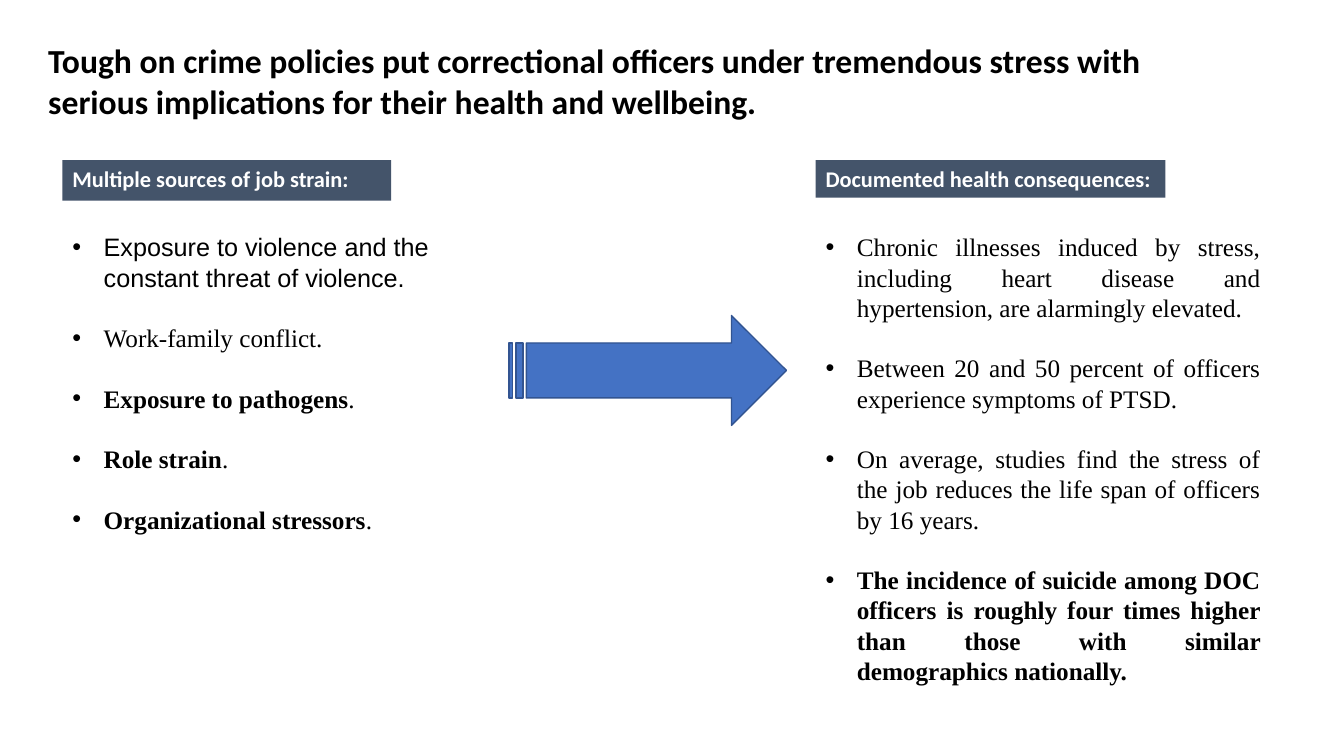
from lxml import etree
from pptx import Presentation
from pptx import util as u
from pptx.dml.color import RGBColor
from pptx.enum import shapes, text
from pptx.oxml.ns import qn

LINE_HEIGHT = u.Pt(21.6)
INDENT = u.Inches(0.31)
LEFT_COLUMN, RIGHT_COLUMN = 0.62, 8.09
HEADER_TOP, LIST_TOP = 1.59, 2.25


def color(value):
    return RGBColor.from_string(value)


def write(paragraph, content, size=18, font="Times New Roman", fill="000000", bold=False):
    run = paragraph.add_run()
    run.text = content
    run.font.size = u.Pt(size)
    run.font.name = font
    run.font.bold = bold
    run.font.color.rgb = color(fill)


presentation = Presentation()
presentation.slide_width = u.Inches(13.33)
presentation.slide_height = u.Inches(7.5)
slide = presentation.slides.add_slide(presentation.slide_layouts[6])

# Title
title = slide.shapes.add_textbox(u.Inches(0.38), u.Inches(0.31), u.Inches(11.75), u.Inches(0.98))
title.text_frame.word_wrap = True
title.text_frame.vertical_anchor = text.MSO_ANCHOR.MIDDLE
write(title.text_frame.paragraphs[0],
      "Tough on crime policies put correctional officers under tremendous stress with "
      "serious implications for their health and wellbeing.",
      size=24, font="Calibri", bold=True)

# Column headers
headers = [
    ("Multiple sources of job strain:", LEFT_COLUMN, 3.26, 0.4),
    ("Documented health consequences:", RIGHT_COLUMN, 3.47, 0.37),
]
for label, left, width, height in headers:
    header = slide.shapes.add_shape(shapes.MSO_SHAPE.RECTANGLE, u.Inches(left),
                                    u.Inches(HEADER_TOP), u.Inches(width), u.Inches(height))
    header.shadow.inherit = False
    header.fill.solid()
    header.fill.fore_color.rgb = color("44546A")
    header.line.fill.background()
    header.text_frame.word_wrap = True
    header.text_frame.vertical_anchor = text.MSO_ANCHOR.TOP
    paragraph = header.text_frame.paragraphs[0]
    paragraph.alignment = text.PP_ALIGN.LEFT
    write(paragraph, label, size=16, font="Calibri", fill="FFFFFF", bold=True)

# Bullet lists: each item is a list of (text, format) runs
strains = [
    [("Exposure to violence and the constant threat of violence.", {"font": "Arial"})],
    [("Work-family conflict.", {})],
    [("Exposure to pathogens", {"bold": True}), (".", {})],
    [("Role strain", {"bold": True}), (".", {})],
    [("Organizational stressors", {"bold": True}), (".", {})],
]
consequences = [
    [("Chronic illnesses induced by stress, including heart disease and hypertension, "
      "are alarmingly elevated.", {})],
    [("Between 20 and 50 percent of officers experience symptoms of PTSD.", {})],
    [("On average, studies find the stress of the job reduces the life span of officers "
      "by 16 years.", {})],
    [("The incidence of suicide among DOC officers is roughly four times higher than those "
      "with similar demographics nationally.", {"bold": True})],
]
columns = [
    (strains, LEFT_COLUMN, 4.25, 3.74, text.PP_ALIGN.LEFT),
    (consequences, RIGHT_COLUMN, 4.51, 5.25, text.PP_ALIGN.JUSTIFY),
]
for items, left, width, height, alignment in columns:
    box = slide.shapes.add_textbox(u.Inches(left), u.Inches(LIST_TOP),
                                   u.Inches(width), u.Inches(height))
    frame = box.text_frame
    frame.word_wrap = True
    for index, runs in enumerate(items):
        paragraph = frame.add_paragraph() if index else frame.paragraphs[0]
        paragraph.alignment = alignment
        paragraph.line_spacing = LINE_HEIGHT
        if index:
            paragraph.space_before = LINE_HEIGHT
        properties = paragraph._p.get_or_add_pPr()
        properties.set("marL", str(INDENT))
        properties.set("indent", str(-INDENT))
        etree.SubElement(properties, qn("a:buFont"), typeface="Arial")
        etree.SubElement(properties, qn("a:buChar"), char="•")
        for content, formatting in runs:
            write(paragraph, content, **formatting)

# Arrow from strain to consequences
arrow = slide.shapes.add_shape(shapes.MSO_SHAPE.STRIPED_RIGHT_ARROW, u.Inches(5.05),
                               u.Inches(3.13), u.Inches(2.75), u.Inches(1.09))
arrow.shadow.inherit = False
arrow.fill.solid()
arrow.fill.fore_color.rgb = color("4472C4")
arrow.line.color.rgb = color("325491")
arrow.line.width = u.Pt(1)

presentation.save("out.pptx")
